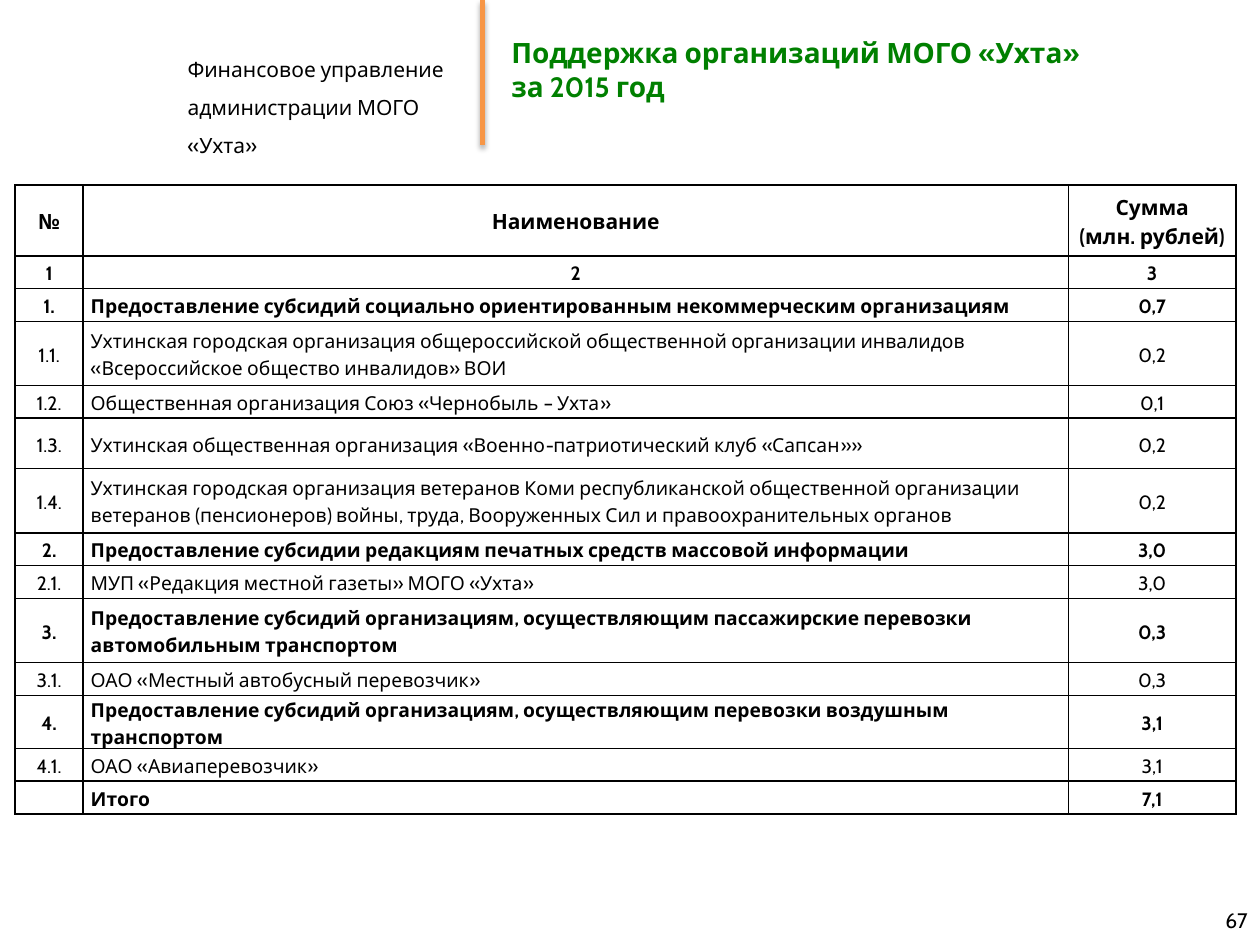
from lxml import etree
from pptx import Presentation
from pptx.dml.color import RGBColor
from pptx.enum.shapes import MSO_CONNECTOR
from pptx.enum.text import MSO_ANCHOR, MSO_AUTO_SIZE, PP_ALIGN
from pptx.oxml import parse_xml
from pptx.oxml.ns import nsdecls, qn
from pptx.util import Inches, Pt

LEFT, CENTER, RIGHT = PP_ALIGN.LEFT, PP_ALIGN.CENTER, PP_ALIGN.RIGHT
TOP, MIDDLE = MSO_ANCHOR.TOP, MSO_ANCHOR.MIDDLE

COLORS = {"text": "000000", "title": "008000", "accent": "F79646", "border": "000000"}
FONT = "Cabin"

DEPARTMENT = "Финансовое управление\nадминистрации МОГО «Ухта»"
TITLE = "Поддержка организаций МОГО «Ухта»\nза 2015 год"
PAGE_NUMBER = "67"

SINGLE, SPACED, DOUBLE, HEADER = 0.26, 0.4, 0.51, 0.56
COLUMN_WIDTHS = (0.54, 7.82, 1.33)
# Row height, bold, then the three cells
ROWS = [
    (HEADER, True, "№", "Наименование", "Сумма\n(млн. рублей)"),
    (SINGLE, True, "1", "2", "3"),
    (SINGLE, True, "1.", "Предоставление субсидий социально ориентированным "
     "некоммерческим организациям", "0,7"),
    (DOUBLE, False, "1.1.", "Ухтинская городская организация общероссийской общественной "
     "организации инвалидов «Всероссийское общество инвалидов» ВОИ", "0,2"),
    (SINGLE, False, "1.2.", "Общественная организация Союз «Чернобыль – Ухта»", "0,1"),
    (SPACED, False, "1.3.", "Ухтинская общественная организация "
     "«Военно-патриотический клуб «Сапсан»»", "0,2"),
    (DOUBLE, False, "1.4.", "Ухтинская городская организация ветеранов Коми республиканской "
     "общественной организации ветеранов (пенсионеров) войны, труда, Вооруженных Сил "
     "и правоохранительных органов", "0,2"),
    (SINGLE, True, "2.", "Предоставление субсидии редакциям печатных средств "
     "массовой информации", "3,0"),
    (SINGLE, False, "2.1.", "МУП «Редакция местной газеты» МОГО «Ухта»", "3,0"),
    (DOUBLE, True, "3.", "Предоставление субсидий организациям, осуществляющим "
     "пассажирские перевозки автомобильным транспортом", "0,3"),
    (SINGLE, False, "3.1.", "ОАО «Местный автобусный перевозчик»", "0,3"),
    (SINGLE, True, "4.", "Предоставление субсидий организациям, осуществляющим "
     "перевозки воздушным транспортом", "3,1"),
    (SINGLE, False, "4.1.", "ОАО «Авиаперевозчик»", "3,1"),
    (SINGLE, True, "", "Итого", "7,1"),
]
HEADING_ROWS = 2


def write(text_frame, text, size, color="text", bold=False, align=LEFT, spacing=None):
    text_frame.word_wrap = True
    text_frame.text = text
    for paragraph in text_frame.paragraphs:
        paragraph.alignment = align
        if spacing:
            paragraph.line_spacing = spacing
        for run in paragraph.runs:
            run.font.name = FONT
            run.font.size = Pt(size)
            run.font.bold = bold
            run.font.color.rgb = RGBColor.from_string(COLORS[color])
        if not paragraph.runs:
            end = etree.SubElement(paragraph._p, qn("a:endParaRPr"))
            end.set("sz", str(size * 100))


def add_text(slide, box, text, size, anchor=MIDDLE, **style):
    shape = slide.shapes.add_textbox(*map(Inches, box))
    write(shape.text_frame, text, size, **style)
    shape.text_frame.vertical_anchor = anchor
    return shape


def add_borders(cell):
    properties = cell._tc.get_or_add_tcPr()
    for side in ("lnL", "lnR", "lnT", "lnB"):
        properties.append(parse_xml(
            f'<a:{side} {nsdecls("a")} w="{Pt(1)}"><a:solidFill>'
            f'<a:srgbClr val="{COLORS["border"]}"/></a:solidFill></a:{side}>'))


def add_divider(slide):
    x = Inches(3.83)
    line = slide.shapes.add_connector(MSO_CONNECTOR.STRAIGHT, x, 0, x, Inches(1.15))
    line.line.color.rgb = RGBColor.from_string(COLORS["accent"])
    line.line.width = Pt(3)
    line._element.spPr.append(parse_xml(
        f'<a:effectLst {nsdecls("a")}><a:outerShdw blurRad="{Pt(3.1)}" dist="{Pt(1.8)}" '
        'dir="5400000" rotWithShape="0"><a:srgbClr val="000000"><a:alpha val="35000"/>'
        '</a:srgbClr></a:outerShdw></a:effectLst>'))


def add_support_table(slide):
    heights = [row[0] for row in ROWS]
    table = slide.shapes.add_table(
        len(ROWS), len(COLUMN_WIDTHS), Inches(0.12), Inches(1.47),
        Inches(sum(COLUMN_WIDTHS)), Inches(sum(heights))).table
    table.first_row = table.horz_banding = False
    for column, width in zip(table.columns, COLUMN_WIDTHS):
        column.width = Inches(width)
    for row_index, (height, bold, *texts) in enumerate(ROWS):
        table.rows[row_index].height = Inches(height)
        for column_index, text in enumerate(texts):
            cell = table.cell(row_index, column_index)
            is_name = column_index == 1 and row_index >= HEADING_ROWS
            write(cell.text_frame, text, 12 if row_index == 0 else 11, bold=bold,
                  align=LEFT if is_name else CENTER, spacing=1.15)
            cell.vertical_anchor = MIDDLE
            cell.margin_left = cell.margin_right = Inches(0.06)
            cell.margin_top = cell.margin_bottom = 0
            add_borders(cell)
            cell.fill.background()


def main():
    presentation = Presentation()
    presentation.slide_width, presentation.slide_height = Inches(10), Inches(7.5)
    slide = presentation.slides.add_slide(presentation.slide_layouts[6])
    department = add_text(slide, (1.39, 0.3, 2.5, 0.66), DEPARTMENT, 12, TOP, spacing=1.5)
    department.text_frame.auto_size = MSO_AUTO_SIZE.SHAPE_TO_FIT_TEXT
    add_divider(slide)
    add_text(slide, (3.96, 0.01, 5.98, 1.08), TITLE, 16, color="title", bold=True)
    add_support_table(slide)
    add_text(slide, (7.67, 7.1, 2.33, 0.4), PAGE_NUMBER, 12, align=RIGHT)
    presentation.save("out.pptx")


if __name__ == "__main__":
    main()
